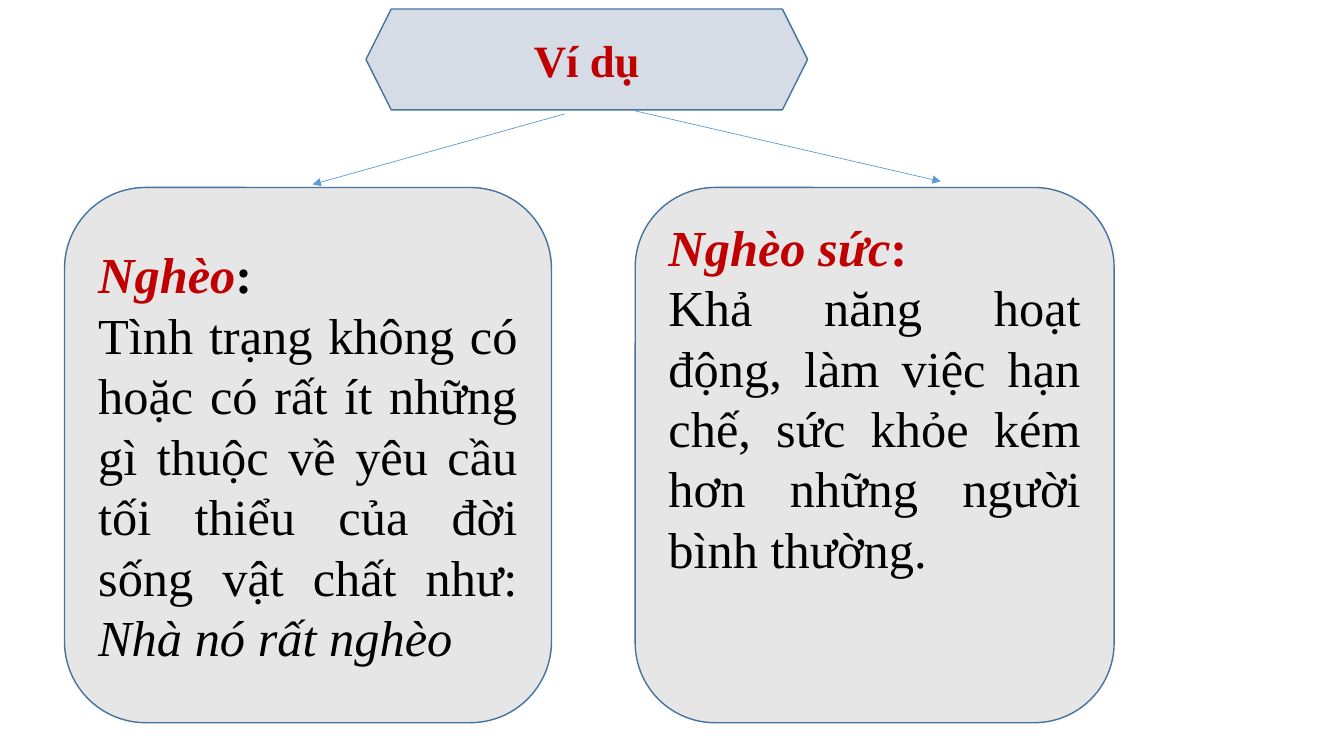
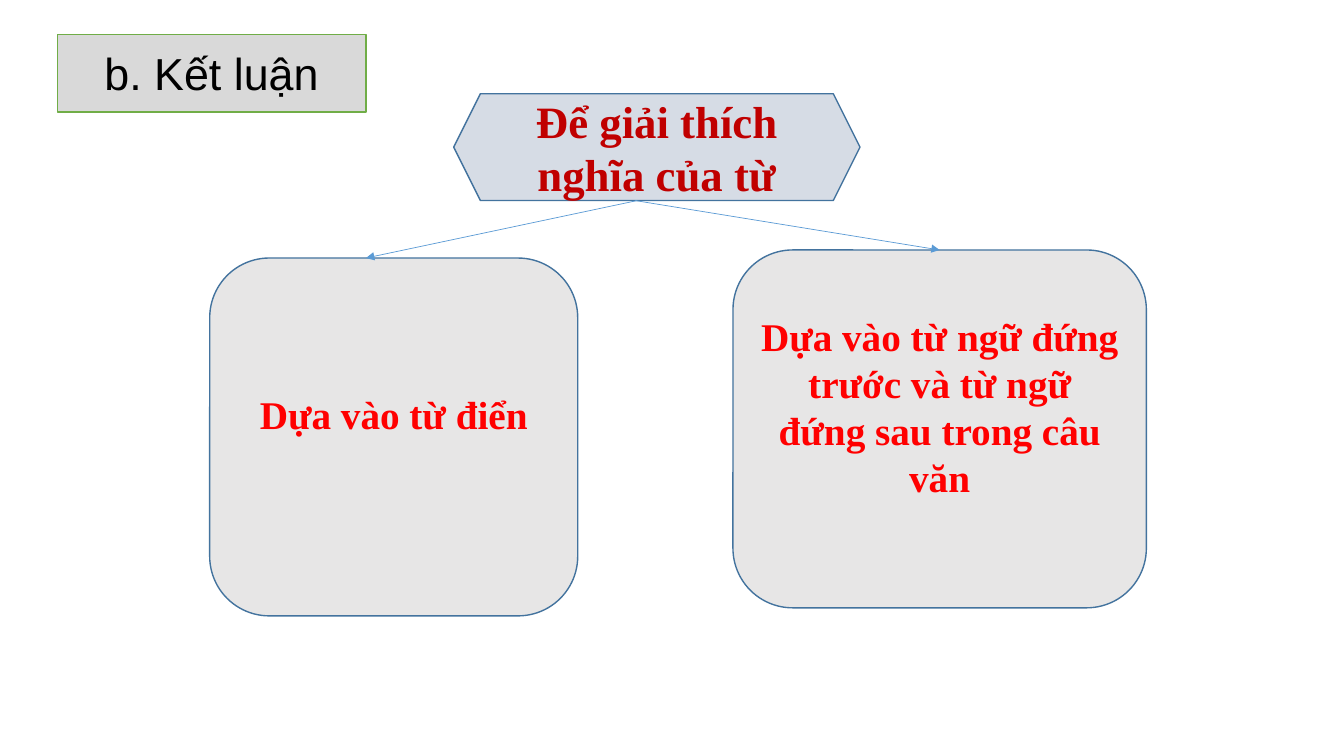
from dataclasses import dataclass

from lxml import etree
from pptx import Presentation
from pptx.dml.color import RGBColor
from pptx.enum.shapes import MSO_CONNECTOR as Connector, MSO_SHAPE as Shape
from pptx.enum.text import MSO_ANCHOR as Anchor, PP_ALIGN as Align
from pptx.oxml.ns import qn
from pptx.util import Inches, Pt


@dataclass(frozen=True)
class Theme:
    serif: str = "Times New Roman"
    sans: str = "Arial"
    banner_fill: str = "D6DCE5"
    card_fill: str = "E7E6E6"
    label_fill: str = "D9D9D9"
    outline: str = "43739E"
    label_outline: str = "70AD47"
    arrow: str = "5B9BD5"
    dark_red: str = "C00000"
    red: str = "FF0000"
    black: str = "000000"
    heading_size: int = 32
    definition_size: int = 36
    method_size: int = 28


theme = Theme()


def add_box(page, kind, place, fill, outline, paragraphs, size, font=theme.serif,
            align=Align.CENTER, bottom=0.05):
    """Each paragraph is a list of (text, colour, style); style holds b and/or i."""
    box = page.shapes.add_shape(kind, *map(Inches, place))
    box.shadow.inherit = False
    box.fill.solid()
    box.fill.fore_color.rgb = RGBColor.from_string(fill)
    box.line.color.rgb = RGBColor.from_string(outline)
    box.line.width = Pt(1)
    frame = box.text_frame
    frame.word_wrap = True
    frame.vertical_anchor = Anchor.MIDDLE
    frame.margin_bottom = Inches(bottom)
    for index, runs in enumerate(paragraphs):
        para = frame.add_paragraph() if index else frame.paragraphs[0]
        para.alignment = align
        for text, colour, style in runs:
            span = para.add_run()
            span.text = text
            span.font.name = font
            span.font.size = Pt(size)
            span.font.bold = "b" in style
            span.font.italic = "i" in style
            span.font.color.rgb = RGBColor.from_string(colour)


def add_arrow(page, start, end):
    arrow = page.shapes.add_connector(Connector.STRAIGHT, *map(Inches, start + end))
    arrow.line.color.rgb = RGBColor.from_string(theme.arrow)
    arrow.line.width = Pt(0.5)
    etree.SubElement(arrow.line._get_or_add_ln(), qn("a:tailEnd"), type="triangle")
    etree.SubElement(arrow._element.spPr, qn("a:effectLst"))


poor = [
    [("Nghèo", theme.dark_red, "bi"), (":", theme.black, "b")],
    [("Tình trạng không có hoặc có rất ít những gì thuộc về yêu cầu tối thiểu "
      "của đời sống vật chất như: ", theme.black, ""),
     ("Nhà nó rất nghèo", theme.black, "i")],
]
weak = [
    [("Nghèo sức", theme.dark_red, "bi"), (":", theme.dark_red, "b")],
    [("Khả năng hoạt động, làm việc hạn chế, sức khỏe kém hơn những người "
      "bình thường.", theme.black, "")],
]
dictionary = [[("Dựa vào từ điển", theme.red, "b")]]
context = [[("Dựa vào từ ngữ đứng trước và từ ngữ đứng sau trong câu văn",
             theme.red, "b")]]

# Cards: place, paragraphs, bottom inset. Arrows: start, end.
diagrams = [
    {
        "banner": ("Ví dụ", (3.63, 0.09, 4.38, 1)),
        "size": theme.definition_size,
        "align": Align.JUSTIFY,
        "cards": [((0.64, 1.86, 4.83, 5.31), poor, 0.05),
                  ((6.3, 1.86, 4.75, 5.31), weak, 1.2)],
        "arrows": [((5.6, 1.13), (3.1, 1.83)), ((6.3, 1.1), (9.33, 1.8))],
    },
    {
        "banner": ("Để giải thích nghĩa của từ", (4.5, 0.93, 4.03, 1.06)),
        "size": theme.method_size,
        "align": Align.CENTER,
        "cards": [((2.08, 2.56, 3.65, 3.55), dictionary, 0.5),
                  ((7.27, 2.48, 4.1, 3.55), context, 0.5)],
        "arrows": [((6.32, 1.99), (3.63, 2.56)), ((6.3, 1.99), (9.32, 2.48))],
    },
]

deck = Presentation()
deck.slide_width = Inches(13.33)
deck.slide_height = Inches(7.5)

for diagram in diagrams:
    page = deck.slides.add_slide(deck.slide_layouts[6])
    title, place = diagram["banner"]
    add_box(page, Shape.HEXAGON, place, theme.banner_fill, theme.outline,
            [[(title, theme.dark_red, "b")]], theme.heading_size)
    for place, paragraphs, bottom in diagram["cards"]:
        add_box(page, Shape.ROUNDED_RECTANGLE, place, theme.card_fill, theme.outline,
                paragraphs, diagram["size"], align=diagram["align"], bottom=bottom)
    for start, end in diagram["arrows"]:
        add_arrow(page, start, end)

# The section label stands on the conclusion slide, the last one.
add_box(page, Shape.RECTANGLE, (0.57, 0.34, 3.06, 0.77), theme.label_fill,
        theme.label_outline, [[("b. Kết luận", theme.black, "")]],
        theme.heading_size, font=theme.sans)

deck.save("out.pptx")
